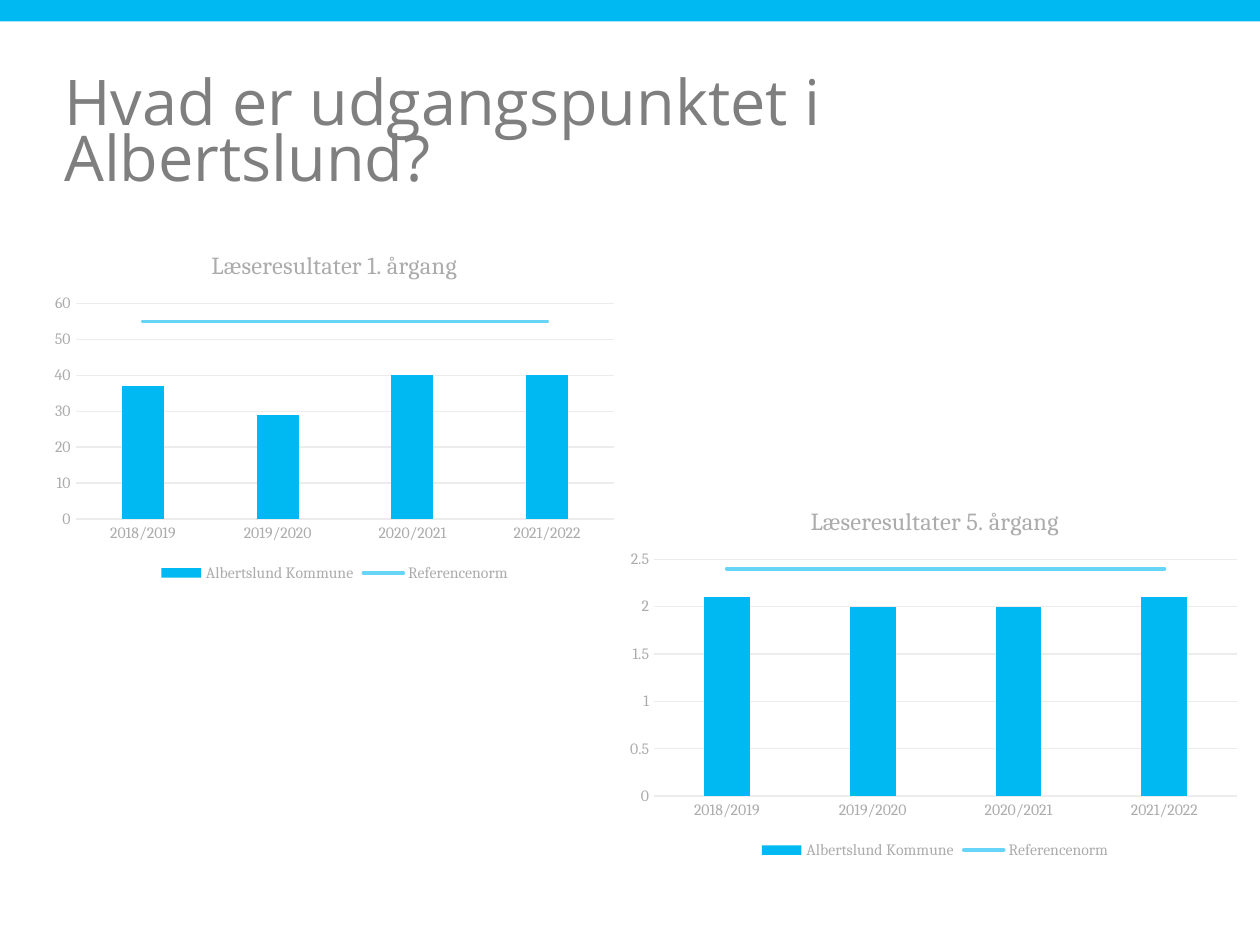
from lxml import etree
from pptx import Presentation
from pptx.chart.data import CategoryChartData
from pptx.dml.color import RGBColor
from pptx.enum.chart import XL_CHART_TYPE as ChartType, XL_LEGEND_POSITION as LegendPosition
from pptx.enum.chart import XL_MARKER_STYLE as MarkerStyle, XL_TICK_MARK as TickMark
from pptx.enum.shapes import MSO_SHAPE as ShapeType
from pptx.enum.text import MSO_ANCHOR as Anchor
from pptx.oxml import parse_xml
from pptx.oxml.ns import nsdecls, qn
from pptx.util import Inches, Pt

# Content
TITLE = "Hvad er udgangspunktet i Albertslund?"
YEARS = ["2018/2019", "2019/2020", "2020/2021", "2021/2022"]
SERIES_NAMES = ["Albertslund Kommune", "Referencenorm"]
CHARTS = [
    {"title": "Læseresultater 1. årgang", "at": (0.33, 1.83, 4.65, 2.83),
     "values": [37, 29, 40, 40], "norm": 55, "top": 60, "step": 10},
    {"title": "Læseresultater 5. årgang", "at": (4.92, 3.86, 5, 3),
     "values": [2.1, 2, 2, 2.1], "norm": 2.4, "top": 2.5, "step": 0.5},
]
PLOT_MARGINS = (0.27, 0.58, 0.1, 0.54)  # left, top, right, bottom

THEME = {
    "accent": "00B9F2", "norm": "66D5F7", "heading": "7F7F7F",
    "label": "ACACAC", "grid": "ECECEC",
    "heading_font": "Open Sans", "chart_font": "Cambria",
    "heading_size": 36, "chart_title_size": 14, "label_size": 9,
}


def color(name):
    return RGBColor.from_string(THEME[name])


def style_font(font, face="chart_font", size="label_size", tint="label"):
    font.name = THEME[face]
    font.size = Pt(THEME[size])
    font.bold = False
    font.color.rgb = color(tint)


def write_text(text_frame, text, line_spacing=None, **font_format):
    paragraph = text_frame.paragraphs[0]
    if line_spacing:
        paragraph.line_spacing = line_spacing
    run = paragraph.add_run()
    run.text = text
    style_font(run.font, **font_format)


def style_line(line, tint, width):
    line.color.rgb = color(tint)
    line.width = Pt(width)


def move_norm_to_line_plot(chart):
    """Turn the second column series into a line on the same axes."""
    bar_plot = chart._chartSpace.find(".//" + qn("c:barChart"))
    series = bar_plot.findall(qn("c:ser"))[1]
    for column_setting in series.findall(qn("c:invertIfNegative")):
        series.remove(column_setting)
    line_plot = parse_xml(
        f'<c:lineChart {nsdecls("c")}><c:grouping val="standard"/>'
        '<c:varyColors val="0"/><c:marker val="1"/></c:lineChart>')
    line_plot.insert(2, series)
    for axis in bar_plot.findall(qn("c:axId")):
        etree.SubElement(line_plot, qn("c:axId")).set("val", axis.get("val"))
    bar_plot.addnext(line_plot)


def place_plot(chart, width, height):
    """Fix the inner plot area at equal margins within the chart."""
    left, top, right, bottom = PLOT_MARGINS
    parts = {"x": left / width, "y": top / height,
             "w": (width - left - right) / width,
             "h": (height - top - bottom) / height}
    plot_area = chart._chartSpace.find(".//" + qn("c:plotArea"))
    for old_layout in plot_area.findall(qn("c:layout")):
        plot_area.remove(old_layout)
    values = "".join(f'<c:{key} val="{value:.3f}"/>' for key, value in parts.items())
    plot_area.insert(0, parse_xml(
        f'<c:layout {nsdecls("c")}><c:manualLayout><c:layoutTarget val="inner"/>'
        f'<c:xMode val="edge"/><c:yMode val="edge"/>{values}'
        '</c:manualLayout></c:layout>'))


def add_results_chart(slide, content):
    data = CategoryChartData(number_format="General")
    data.categories = YEARS
    data.add_series(SERIES_NAMES[0], content["values"])
    data.add_series(SERIES_NAMES[1], [content["norm"]] * len(YEARS))
    left, top, width, height = content["at"]
    chart = slide.shapes.add_chart(
        ChartType.COLUMN_CLUSTERED, Inches(left), Inches(top),
        Inches(width), Inches(height), data).chart
    style_font(chart.font)
    move_norm_to_line_plot(chart)
    place_plot(chart, width, height)

    # Title and legend
    chart.has_title = True
    chart.chart_title.include_in_layout = False
    write_text(chart.chart_title.text_frame, content["title"], size="chart_title_size")
    chart.has_legend = True
    chart.legend.position = LegendPosition.BOTTOM
    chart.legend.include_in_layout = False
    style_font(chart.legend.font)

    # Columns and reference line
    columns, norm_line = chart.plots
    columns.gap_width = 219
    columns.vary_by_categories = False
    fill = columns.series[0].format.fill
    fill.solid()
    fill.fore_color.rgb = color("accent")
    norm = norm_line.series[0]
    norm.smooth = False
    norm.marker.style = MarkerStyle.NONE
    style_line(norm.format.line, "norm", 2.25)
    norm.format.line._ln.set("cap", "rnd")

    # Axes
    for axis in (chart.category_axis, chart.value_axis):
        axis.major_tick_mark = axis.minor_tick_mark = TickMark.NONE
        style_font(axis.tick_labels.font)
    style_line(chart.category_axis.format.line, "grid", 0.75)
    value_axis = chart.value_axis
    value_axis.format.line.fill.background()
    value_axis.minimum_scale = 0
    value_axis.maximum_scale = content["top"]
    value_axis.major_unit = content["step"]
    style_line(value_axis.major_gridlines.format.line, "grid", 0.75)


def main():
    presentation = Presentation()
    presentation.slide_width = Inches(10)
    presentation.slide_height = Inches(7.5)
    slide = presentation.slides.add_slide(presentation.slide_layouts[6])

    # Top band
    band = slide.shapes.add_shape(ShapeType.RECTANGLE, 0, 0, Inches(10), Inches(0.17))
    band.shadow.inherit = False
    band.fill.solid()
    band.fill.fore_color.rgb = color("accent")
    band.line.fill.background()

    # Heading
    heading = slide.shapes.add_textbox(Inches(0.51), Inches(0.64), Inches(8.94), Inches(1.22))
    frame = heading.text_frame
    frame.word_wrap = True
    frame.vertical_anchor = Anchor.TOP
    frame.margin_left = frame.margin_top = frame.margin_right = frame.margin_bottom = 0
    write_text(frame, TITLE, line_spacing=0.74, face="heading_font",
               size="heading_size", tint="heading")

    # Charts
    for content in CHARTS:
        add_results_chart(slide, content)

    presentation.save("out.pptx")


if __name__ == "__main__":
    main()
